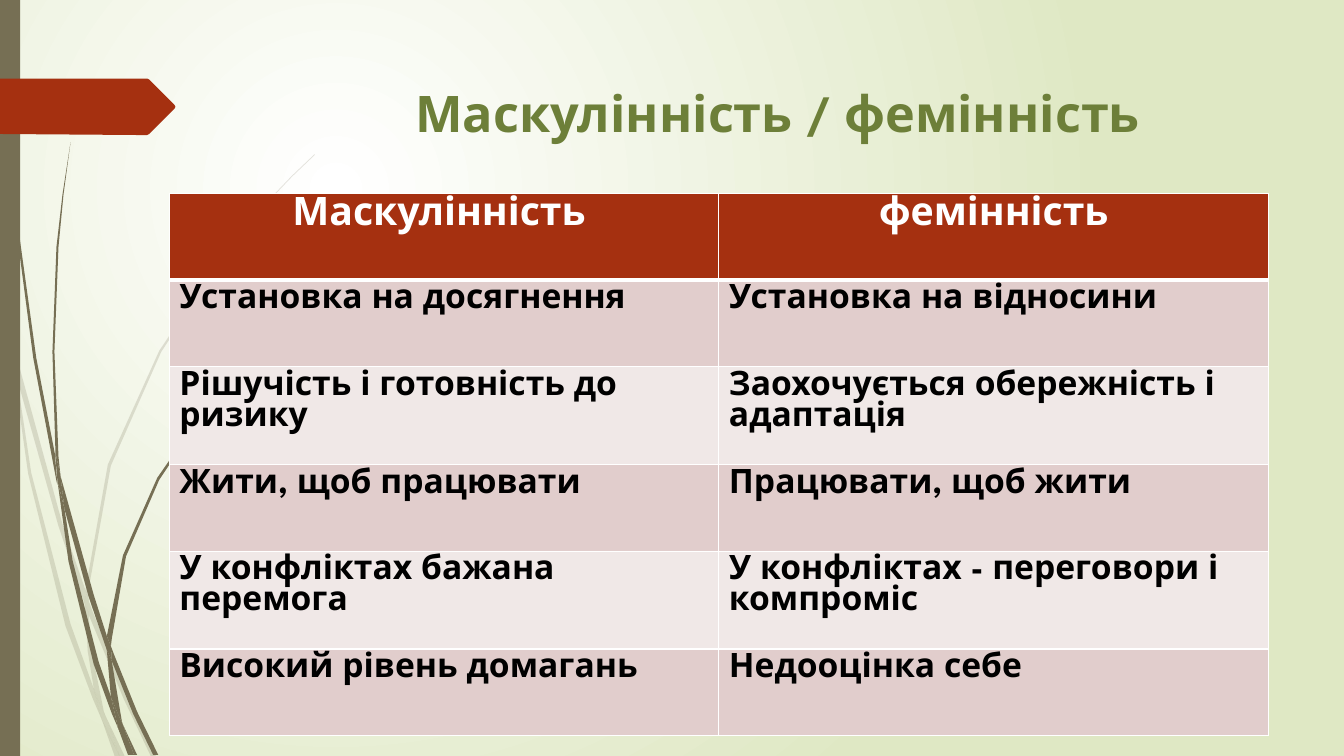
from dataclasses import dataclass

from lxml import etree
from pptx import Presentation
from pptx import util as u
from pptx.dml.color import RGBColor
from pptx.enum import shapes, text
from pptx.oxml import ns

Point = tuple[float, float]

FONT = "League Spartan"
RUST, TAUPE, OLIVE = "A53010", "766F54", "6D7F39"
WHITE, BLACK, SAGE = "FFFFFF", "000000", "DFE8C4"
BANDS = ("E1CDCC", "F0E8E7")


@dataclass(frozen=True)
class Outline:
    points: tuple[Point, ...]


@dataclass(frozen=True)
class Grass:
    opacity: int
    blades: tuple[Outline, ...]


@dataclass(frozen=True)
class Row:
    masculine: str
    feminine: str
    height: float


@dataclass(frozen=True)
class TextStyle:
    size: int
    color: str
    align: text.PP_ALIGN


PALE_GRASS = Grass(20, (
    Outline(((0.11, 3.5), (0.09, 3.22), (0, 2.82), (0, 2.99), (0.1, 3.44))),
    Outline(((0.58, 5.22), (0.84, 5.99), (0.85, 5.86), (0.62, 5.2), (0.14, 3.45),
             (0.17, 3.76))),
    Outline(((0.92, 6.07), (0.88, 5.96), (0.88, 6.1), (1.23, 6.94), (1.5, 7.51),
             (1.55, 7.51), (1.27, 6.92))),
    Outline(((1.19, 7.51), (1.24, 7.51), (1.05, 7.11))),
    Outline(((0.93, 6.83), (0.7, 6.19), (0.31, 4.69), (0.17, 3.76), (0.11, 3.5),
             (0.28, 4.7), (0.65, 6.21), (0.92, 6.93), (1.01, 7.14), (0.99, 7.07))),
    Outline(((0.84, 5.99), (0.87, 6.46), (0.93, 6.83), (0.96, 6.92), (1.05, 7.11),
             (1.03, 7.06), (0.91, 6.46), (0.88, 6.1), (0.88, 6.08))),
    Outline(((0.88, 5.84), (1.1, 4.62), (1.6, 3.49), (2.29, 2.45), (2.68, 1.98),
             (2.9, 1.75), (3.12, 1.54), (3.12, 1.53), (2.89, 1.75), (2.68, 1.97),
             (2.28, 2.44), (1.58, 3.48), (1.07, 4.61), (0.85, 5.84), (0.85, 5.86),
             (0.88, 5.96))),
    Outline(((1.01, 7.14), (1.14, 7.51), (1.19, 7.51))),
    Outline(((0.88, 6.08), (0.88, 6.1), (0.88, 5.96), (0.85, 5.86), (0.84, 5.99))),
    Outline(((0.96, 6.92), (0.93, 6.83), (0.99, 7.07), (1.01, 7.14), (1.19, 7.51),
             (1.05, 7.11))),
))

DARK_GRASS = Grass(100, (
    Outline(((0.07, 1.1), (0.17, 2.33), (0.33, 3.55), (0.56, 4.77), (0.57, 4.81),
             (0.55, 4.57), (0.55, 4.53), (0.36, 3.55), (0.19, 2.32), (0.08, 1.09),
             (0.05, 0.48), (0.04, 0), (0.03, 0), (0.04, 0.48))),
    Outline(((0.88, 5.92), (1.06, 6.45), (1.06, 6.31), (0.93, 5.9), (0.6, 4.72),
             (0.64, 5.05))),
    Outline(((1.13, 6.49), (1.1, 6.41), (1.11, 6.56), (1.32, 7.08), (1.52, 7.49),
             (1.57, 7.49), (1.36, 7.06))),
    Outline(((1.1, 6.91), (0.98, 6.57), (0.72, 5.56), (0.64, 5.05), (0.57, 4.77),
             (0.68, 5.57), (0.93, 6.59), (1.11, 7.08), (1.17, 7.22), (1.16, 7.17))),
    Outline(((0.6, 4.72), (0.58, 4.53), (0.54, 3.49), (0.58, 2.45), (0.63, 1.93),
             (0.7, 1.41), (0.62, 1.93), (0.56, 2.45), (0.52, 3.49), (0.55, 4.49))),
    Outline(((1.33, 7.49), (1.36, 7.49), (1.22, 7.19))),
    Outline(((0.57, 4.77), (0.64, 5.05), (0.6, 4.72), (0.55, 4.49), (0.55, 4.53))),
    Outline(((1.11, 6.33), (1.25, 5.52), (1.58, 4.76), (2.05, 4.06), (2.31, 3.74),
             (2.45, 3.59), (2.61, 3.44), (2.6, 3.44), (2.45, 3.58), (2.31, 3.73),
             (2.04, 4.05), (1.56, 4.74), (1.22, 5.51), (1.06, 6.31), (1.1, 6.41))),
    Outline(((1.17, 7.22), (1.27, 7.49), (1.31, 7.49))),
    Outline(((1.06, 6.45), (1.1, 6.91), (1.16, 7.06), (1.22, 7.19), (1.21, 7.16),
             (1.11, 6.56), (1.09, 6.51))),
    Outline(((1.06, 6.45), (1.09, 6.51), (1.11, 6.56), (1.1, 6.41), (1.06, 6.31))),
    Outline(((1.16, 7.06), (1.1, 6.91), (1.16, 7.17), (1.17, 7.22), (1.3, 7.49),
             (1.33, 7.49), (1.22, 7.19))),
))

ARROW_TAB = Outline(((0, 0.78), (1.46, 0.78), (1.48, 0.79), (1.73, 1.04),
                     (1.74, 1.06), (1.73, 1.08), (1.48, 1.33), (1.46, 1.34),
                     (1.36, 1.34), (0, 1.33)))

ROWS = (
    Row("Маскулінність ", "фемінність", 0.86),
    Row("Установка на досягнення", "Установка на відносини", 0.86),
    Row("Рішучість і готовність до ризику", "Заохочується обережність і адаптація", 0.97),
    Row("Жити, щоб працювати", "Працювати, щоб жити", 0.86),
    Row("У конфліктах бажана перемога", "У конфліктах - переговори і компроміс", 0.97),
    Row("Високий рівень домагань", "Недооцінка себе", 0.86),
)

TITLE_STYLE = TextStyle(36, OLIVE, text.PP_ALIGN.CENTER)
HEADER_STYLE = TextStyle(28, WHITE, text.PP_ALIGN.CENTER)
BODY_STYLE = TextStyle(24, BLACK, text.PP_ALIGN.LEFT)


def color(value: str) -> RGBColor:
    return RGBColor.from_string(value)


def paint(shape, fill: str, opacity: int = 100) -> None:
    shape.shadow.inherit = False
    shape.fill.solid()
    shape.fill.fore_color.rgb = color(fill)
    shape.line.fill.background()
    if opacity < 100:
        tone = shape.element.spPr.find(".//" + ns.qn("a:srgbClr"))
        etree.SubElement(tone, ns.qn("a:alpha"), val=str(opacity * 1000))


def draw_outline(container, outline: Outline, fill: str, opacity: int = 100) -> None:
    start, *rest = [(u.Inches(x), u.Inches(y)) for x, y in outline.points]
    builder = container.build_freeform(*start)
    builder.add_line_segments(rest, close=True)
    paint(builder.convert_to_shape(), fill, opacity)


def draw_grass(slide, grass: Grass) -> None:
    group = slide.shapes.add_group_shape()
    for blade in grass.blades:
        draw_outline(group.shapes, blade, TAUPE, grass.opacity)


def write(frame, words: str, style: TextStyle) -> None:
    paragraph = frame.paragraphs[0]
    paragraph.alignment = style.align
    run = paragraph.add_run()
    run.text = words
    run.font.name = FONT
    run.font.size = u.Pt(style.size)
    run.font.bold = True
    run.font.color.rgb = color(style.color)


def draw_background(slide) -> None:
    fill = slide.background.fill
    fill.gradient()
    for stop, tone in zip(fill.gradient_stops, (WHITE, SAGE)):
        stop.color.rgb = color(tone)
    gradient = slide.element.find(".//" + ns.qn("a:gradFill"))
    gradient.remove(gradient.find(ns.qn("a:lin")))
    circle = etree.SubElement(gradient, ns.qn("a:path"), path="circle")
    etree.SubElement(circle, ns.qn("a:fillToRect"),
                     l="50000", t="50000", r="100000", b="100000")


def add_borders(cell, widths: dict[str, int]) -> None:
    properties = cell._tc.get_or_add_tcPr()
    for position, (side, width) in enumerate(widths.items()):
        border = etree.Element(ns.qn(f"a:{side}"), w=str(u.Pt(width)))
        solid = etree.SubElement(border, ns.qn("a:solidFill"))
        etree.SubElement(solid, ns.qn("a:srgbClr"), val=WHITE)
        properties.insert(position, border)


def draw_table(slide) -> None:
    height = sum(row.height for row in ROWS)
    table = slide.shapes.add_table(len(ROWS), 2, u.Inches(1.68), u.Inches(1.92),
                                   u.Inches(10.9), u.Inches(height)).table
    for index, row in enumerate(ROWS):
        header = index == 0
        table.rows[index].height = u.Inches(row.height)
        for column, words in enumerate((row.masculine, row.feminine)):
            cell = table.cell(index, column)
            cell.fill.solid()
            cell.fill.fore_color.rgb = color(RUST if header else BANDS[(index - 1) % 2])
            add_borders(cell, {"lnL": 1, "lnR": 1, "lnT": 3 if index == 1 else 1,
                               "lnB": 3 if header else 1})
            write(cell.text_frame, words, HEADER_STYLE if header else BODY_STYLE)


def main() -> None:
    presentation = Presentation()
    presentation.slide_width = u.Inches(13.33)
    presentation.slide_height = u.Inches(7.5)
    slide = presentation.slides.add_slide(presentation.slide_layouts[6])
    draw_background(slide)
    draw_grass(slide, PALE_GRASS)
    draw_grass(slide, DARK_GRASS)
    side_bar = slide.shapes.add_shape(shapes.MSO_SHAPE.RECTANGLE, 0, 0,
                                      u.Inches(0.2), u.Inches(7.5))
    paint(side_bar, TAUPE)
    draw_outline(slide.shapes, ARROW_TAB, RUST)
    title = slide.shapes.add_textbox(u.Inches(2.84), u.Inches(0.68),
                                     u.Inches(9.75), u.Inches(0.87)).text_frame
    title.word_wrap = True
    title.vertical_anchor = text.MSO_ANCHOR.MIDDLE
    write(title, "Маскулінність / фемінність", TITLE_STYLE)
    draw_table(slide)
    presentation.save("out.pptx")


if __name__ == "__main__":
    main()
